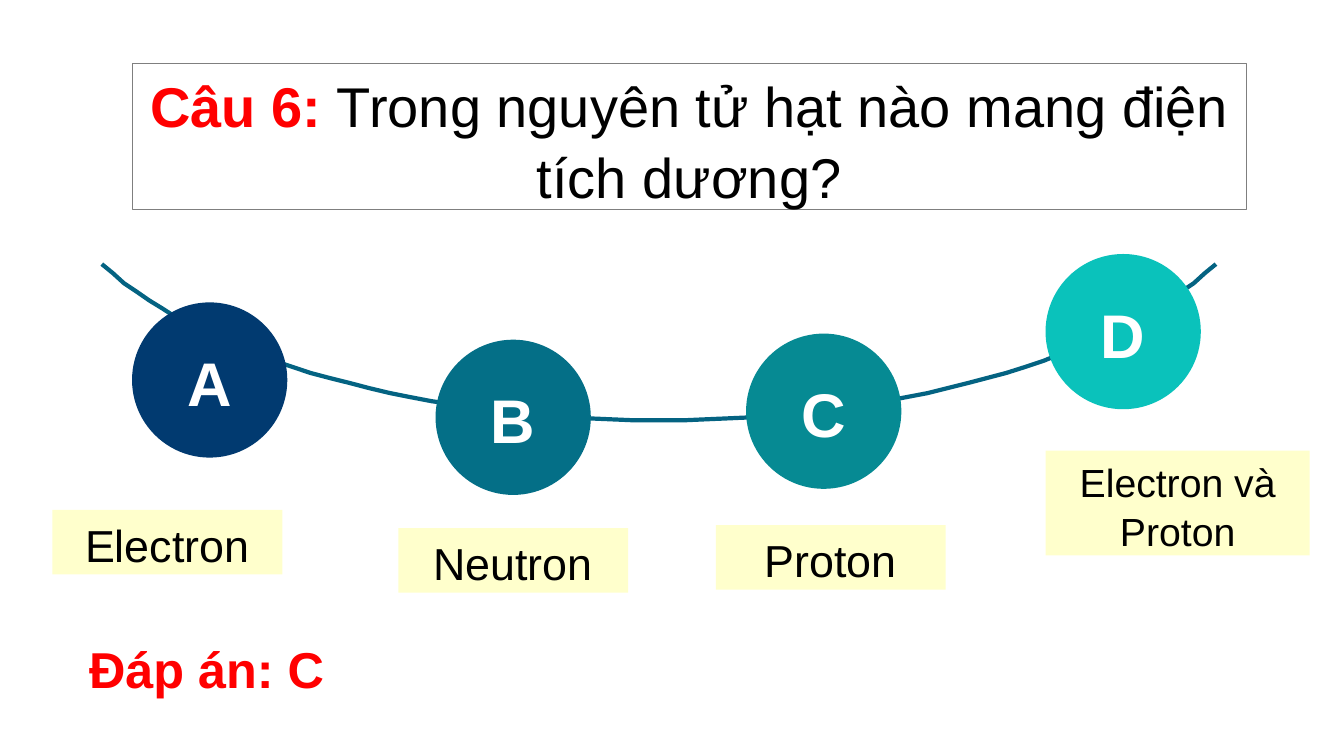
from pptx import Presentation
from pptx.dml.color import RGBColor
from pptx.enum.shapes import MSO_SHAPE
from pptx.enum.text import MSO_ANCHOR, MSO_AUTO_SIZE, PP_ALIGN
from pptx.util import Pt

PX = 9144


def color(hex_code):
    """Turn a hex string into a colour."""
    return RGBColor.from_string(hex_code)


def bezier(start, first, second, end, steps=30):
    """List points along a cubic curve."""
    points = []
    for step in range(steps + 1):
        t = step / steps
        weights = ((1 - t) ** 3, 3 * t * (1 - t) ** 2, 3 * t * t * (1 - t), t ** 3)
        points.append(tuple(
            sum(weight * value for weight, value in zip(weights, axis))
            for axis in zip(start, first, second, end)))
    return points


class QuizSlide:
    """Hold the quiz style and the current slide."""

    font = "Arial"
    leading = 1.05

    def __init__(self, deck):
        """Add a title-only slide."""
        self.slide = deck.slides.add_slide(deck.slide_layouts[5])

    def set_text(self, shape, runs, size, anchor=MSO_ANCHOR.TOP, inset=(10, 5)):
        """Fill a shape with centred runs of text, colour and weight."""
        frame = shape.text_frame
        frame.word_wrap = True
        frame.auto_size = MSO_AUTO_SIZE.NONE
        frame.vertical_anchor = anchor
        frame.margin_left = frame.margin_right = inset[0] * PX
        frame.margin_top = frame.margin_bottom = inset[1] * PX
        paragraph = frame.paragraphs[0]
        paragraph.alignment = PP_ALIGN.CENTER
        paragraph.line_spacing = self.leading
        for text, ink, bold in runs:
            run = paragraph.add_run()
            run.text = text
            run.font.name = self.font
            run.font.size = Pt(size)
            run.font.bold = bold
            run.font.color.rgb = color(ink)

    def question(self, box, runs):
        """Place the framed question in the title."""
        title = self.slide.shapes.title
        title.left, title.top, title.width, title.height = (n * PX for n in box)
        title.fill.solid()
        title.fill.fore_color.rgb = color("FFFFFF")
        title.line.color.rgb = color("7F7F7F")
        title.line.width = Pt(0.75)
        self.set_text(title, runs, 40)

    def arc(self, points, ink):
        """Draw an open curve through the points."""
        builder = self.slide.shapes.build_freeform(*points[0], scale=PX)
        builder.add_line_segments(points[1:], close=False)
        curve = builder.convert_to_shape()
        curve.shadow.inherit = False
        curve.fill.background()
        curve.line.color.rgb = color(ink)
        curve.line.width = Pt(3)

    def block(self, kind, box, fill):
        """Add a plain filled shape."""
        shape = self.slide.shapes.add_shape(kind, *(n * PX for n in box))
        shape.shadow.inherit = False
        shape.fill.solid()
        shape.fill.fore_color.rgb = color(fill)
        shape.line.fill.background()
        return shape

    def badge(self, letter, left, top, fill):
        """Add a lettered circle."""
        circle = self.block(MSO_SHAPE.OVAL, (left, top, 154, 154), fill)
        self.set_text(circle, [(letter, "FFFFFF", True)], 44, MSO_ANCHOR.MIDDLE)

    def choice(self, text, box, size):
        """Add a yellow answer label."""
        label = self.block(MSO_SHAPE.RECTANGLE, box, "FFFFCC")
        self.set_text(label, [(text, "000000", False)], size)

    def solution(self, text, box):
        """Add the correct answer."""
        note = self.slide.shapes.add_textbox(*(n * PX for n in box))
        self.set_text(note, [(text, "FF0000", True)], 36, inset=(0, 0))


def main():
    """Build and save the quiz slide."""
    deck = Presentation()
    deck.slide_width, deck.slide_height = 1333 * PX, 750 * PX
    quiz = QuizSlide(deck)
    left_half = bezier((101, 262), (203, 357), (418, 417), (653, 417))
    right_half = bezier((653, 417), (889, 417), (1103, 357), (1206, 262))
    quiz.arc(left_half + right_half[1:], "046382")
    options = [
        ("A", 131, 300, "013A70", "Electron", (52, 506, 228, 64), 32),
        ("B", 432, 337, "046F87", "Neutron", (395, 524, 228, 64), 32),
        ("C", 740, 331, "068A93", "Proton", (710, 521, 228, 64), 32),
        ("D", 1037, 252, "0AC2BB", "Electron và Proton", (1037, 447, 262, 104), 28),
    ]
    for letter, left, top, fill, answer, box, size in options:
        quiz.badge(letter, left, top, fill)
        quiz.choice(answer, box, size)
    quiz.question((131, 63, 1105, 145), [
        ("Câu 6: ", "FF0000", True),
        ("Trong nguyên tử hạt nào mang điện tích dương?", "000000", False),
    ])
    quiz.solution("Đáp án: C", (68, 630, 274, 61))
    deck.save("out.pptx")


if __name__ == "__main__":
    main()
